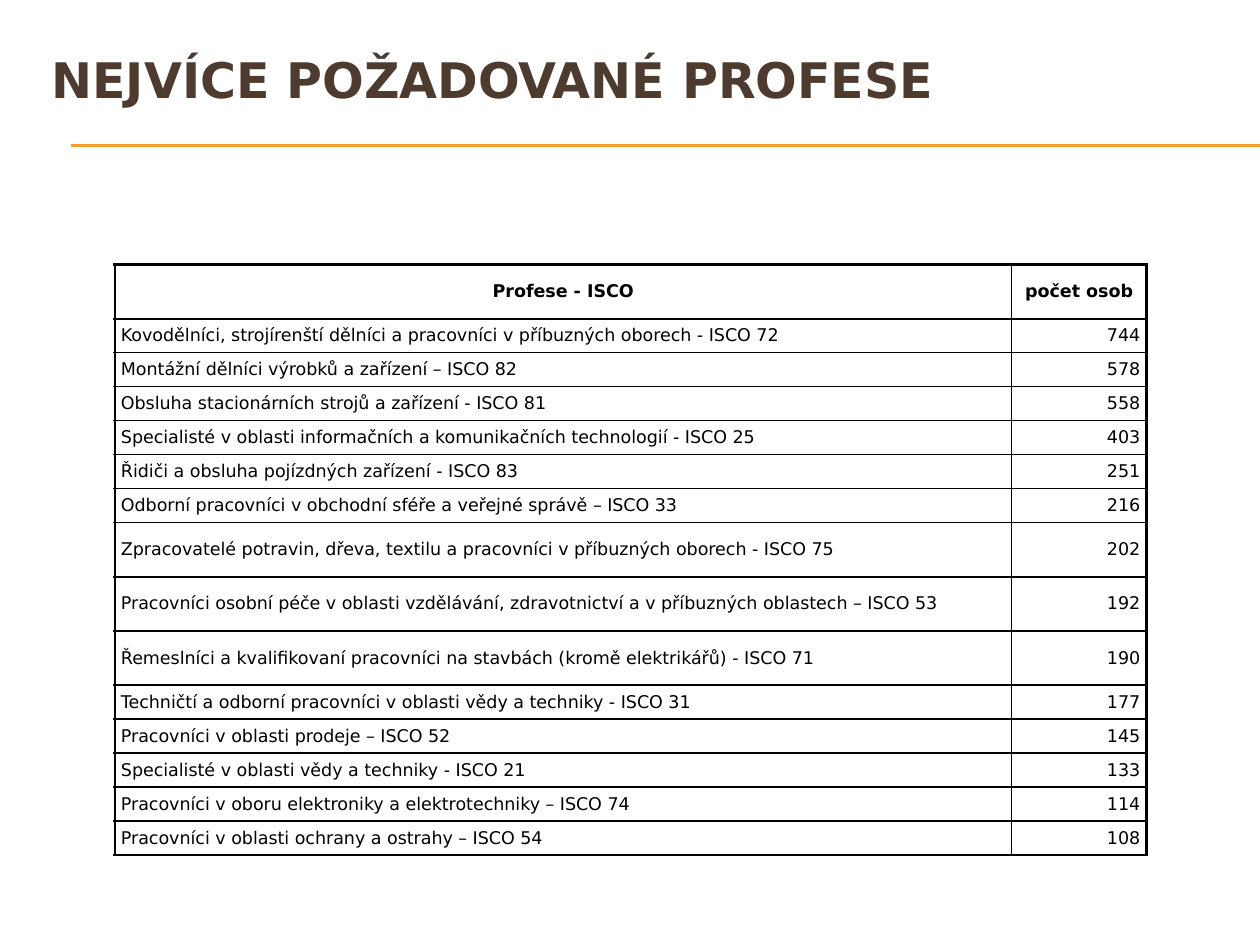
from typing import NamedTuple

from lxml import etree
from pptx import Presentation
from pptx.dml.color import RGBColor
from pptx.enum.shapes import MSO_CONNECTOR
from pptx.enum.text import MSO_ANCHOR, PP_ALIGN
from pptx.oxml.ns import qn
from pptx.util import Inches, Pt

LEFT, CENTER, RIGHT = PP_ALIGN.LEFT, PP_ALIGN.CENTER, PP_ALIGN.RIGHT
MIDDLE = MSO_ANCHOR.MIDDLE
STRAIGHT = MSO_CONNECTOR.STRAIGHT

FONT = "DejaVu Sans"
BROWN, ORANGE, BLACK = "4E3B30", "F0A22E", "000000"
LOW, TALL = 0.27, 0.43
THIN, THICK = 1, 1.5
COL_WIDTHS = (7.12, 1.07)


class Profession(NamedTuple):
    name: str
    people: str
    height: float = LOW


HEADER = Profession("Profese - ISCO", "počet osob", TALL)
PROFESSIONS = [
    Profession("Kovodělníci, strojírenští dělníci a pracovníci v příbuzných oborech - ISCO 72", "744"),
    Profession("Montážní dělníci výrobků a zařízení – ISCO 82", "578"),
    Profession("Obsluha stacionárních strojů a zařízení - ISCO 81", "558"),
    Profession("Specialisté v oblasti informačních a komunikačních technologií - ISCO 25", "403"),
    Profession("Řidiči a obsluha pojízdných zařízení - ISCO 83", "251"),
    Profession("Odborní pracovníci v obchodní sféře a veřejné správě – ISCO 33", "216"),
    Profession("Zpracovatelé potravin, dřeva, textilu a pracovníci v příbuzných oborech - ISCO 75", "202", TALL),
    Profession("Pracovníci osobní péče v oblasti vzdělávání, zdravotnictví a v příbuzných oblastech – ISCO 53",
               "192", TALL),
    Profession("Řemeslníci a kvalifikovaní pracovníci na stavbách (kromě elektrikářů) - ISCO 71", "190", TALL),
    Profession("Techničtí a odborní pracovníci v oblasti vědy a techniky - ISCO 31", "177"),
    Profession("Pracovníci v oblasti prodeje – ISCO 52", "145"),
    Profession("Specialisté v oblasti vědy a techniky - ISCO 21", "133"),
    Profession("Pracovníci v oboru elektroniky a elektrotechniky – ISCO 74", "114"),
    Profession("Pracovníci v oblasti ochrany a ostrahy – ISCO 54", "108"),
]


def rgb(color: str) -> RGBColor:
    return RGBColor.from_string(color)


def write(tf, text: str, size: float, color: str, bold: bool, align) -> None:
    p = tf.paragraphs[0]
    p.alignment = align
    r = p.add_run()
    r.text = text
    r.font.name, r.font.size, r.font.bold = FONT, Pt(size), bold
    r.font.color.rgb = rgb(color)


def add_rule(s, y: float) -> None:
    line = s.shapes.add_connector(STRAIGHT, Inches(0.56), Inches(y), Inches(10), Inches(y))
    line.line.color.rgb = rgb(ORANGE)
    line.line.width = Pt(0.75)
    etree.SubElement(line._element.spPr, qn("a:effectLst"))


def set_borders(cell, **widths: float) -> None:
    tc_pr = cell._tc.get_or_add_tcPr()
    for side, width in widths.items():
        ln = etree.SubElement(tc_pr, qn(f"a:ln{side}"), w=str(Pt(width)))
        fill = etree.SubElement(ln, qn("a:solidFill"))
        etree.SubElement(fill, qn("a:srgbClr"), val=BLACK)


def add_table(s, rows: list[Profession]) -> None:
    height = sum(row.height for row in rows)
    table = s.shapes.add_table(len(rows), len(COL_WIDTHS), Inches(0.91), Inches(2.1),
                               Inches(sum(COL_WIDTHS)), Inches(height)).table
    table.horz_banding = False
    for col, width in zip(table.columns, COL_WIDTHS):
        col.width = Inches(width)

    for i, row in enumerate(rows):
        table.rows[i].height = Inches(row.height)
        header, last = i == 0, i == len(rows) - 1
        for j, text in enumerate((row.name, row.people)):
            cell = table.cell(i, j)
            # Thick lines around the table and under its header
            set_borders(cell,
                        L=THICK if j == 0 else THIN,
                        R=THICK if j == 1 else THIN,
                        T=THICK if i <= 1 else THIN,
                        B=THICK if header or last else THIN)
            cell.fill.background()
            cell.vertical_anchor = MIDDLE
            cell.margin_left = cell.margin_right = Inches(0.05)
            cell.margin_top = cell.margin_bottom = 0
            align = CENTER if header else (LEFT, RIGHT)[j]
            write(cell.text_frame, text, 10, BLACK, header, align)


def main() -> None:
    prs = Presentation()
    prs.slide_width, prs.slide_height = Inches(10), Inches(7.5)
    s = prs.slides.add_slide(prs.slide_layouts[5])

    # Title with the double rule under it
    title = s.shapes.title
    title.left, title.top = Inches(0.31), Inches(0)
    title.width, title.height = Inches(8.98), Inches(1.25)
    title.text_frame.vertical_anchor = MIDDLE
    write(title.text_frame, "NEJVÍCE POŽADOVANÉ PROFESE", 28, BROWN, True, LEFT)
    for y in (1.15, 1.16):
        add_rule(s, y)

    # Table of professions
    add_table(s, [HEADER, *PROFESSIONS])
    prs.save("out.pptx")


if __name__ == "__main__":
    main()
